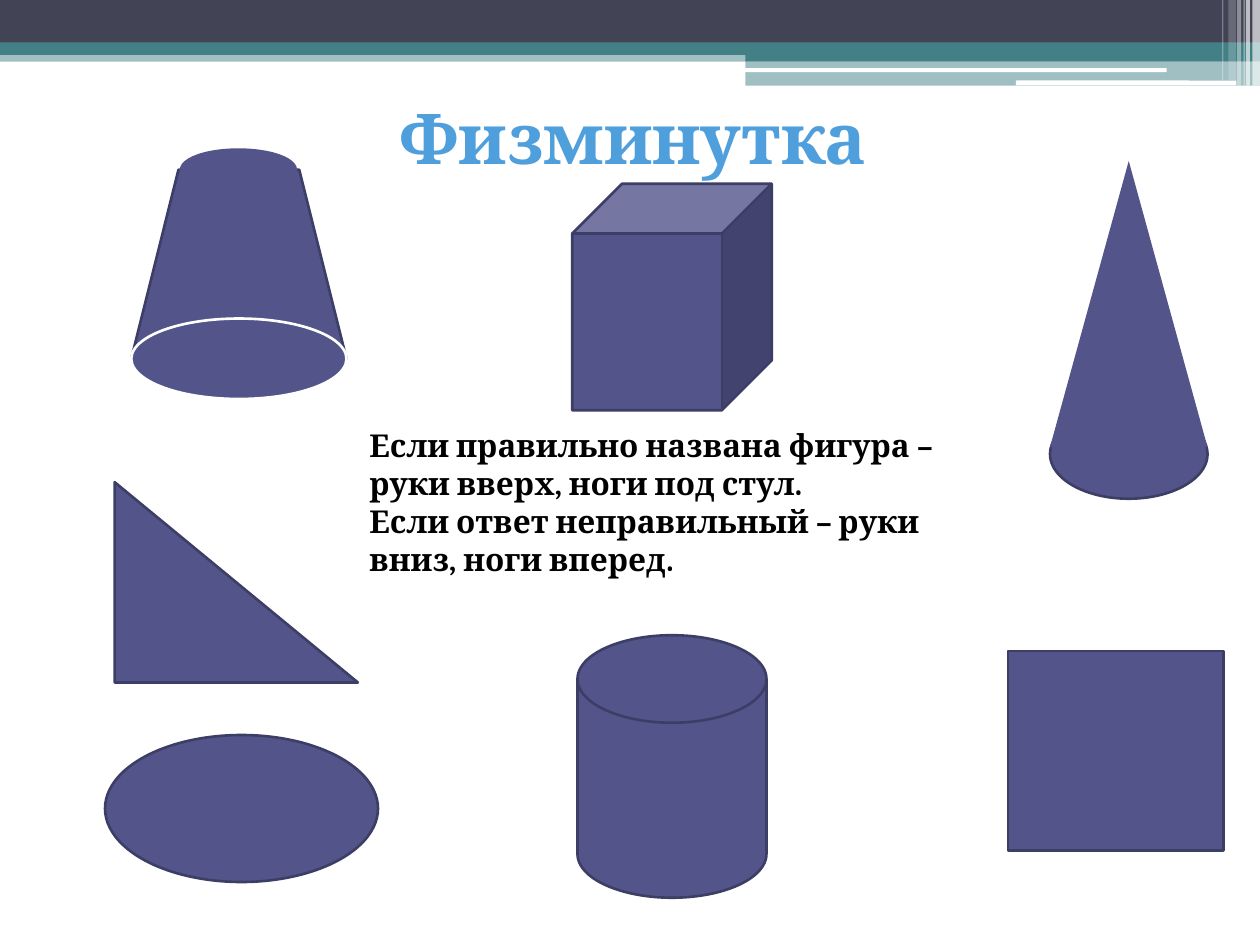
"""Build the "Физминутка" slide: geometric figures around an exercise rule."""
import pptx
import pptx.util
import pptx.dml.color
import pptx.enum.shapes
import pptx.enum.text
import pptx.oxml
import pptx.oxml.ns

Pt = pptx.util.Pt
RGBColor = pptx.dml.color.RGBColor
Shape = pptx.enum.shapes.MSO_SHAPE
Align = pptx.enum.text.PP_ALIGN
Anchor = pptx.enum.text.MSO_ANCHOR

WHITE = RGBColor(0xFF, 0xFF, 0xFF)
BLACK = RGBColor(0, 0, 0)
SLATE = RGBColor(0x42, 0x44, 0x56)
TEAL = RGBColor(0x43, 0x80, 0x86)
INDIGO = RGBColor(0x53, 0x54, 0x8A)
DARK_INDIGO = RGBColor(0x3D, 0x3E, 0x66)
SKY = RGBColor(0x4E, 0x9F, 0xDB)
FONT = "Cambria"

BANNER = [
    (Shape.RECTANGLE, (0, 28.8, 720, 6.5), TEAL, 50),
    (Shape.RECTANGLE, (0, 0, 720, 24.5), SLATE, 100),
    (Shape.RECTANGLE, (0, 24.2, 720, 7.2), TEAL, 100),
    (Shape.RECTANGLE, (426, 28, 294, 7), TEAL, 100),
    (Shape.RECTANGLE, (426, 34.7, 294, 14.2), TEAL, 50),
    (Shape.ROUNDED_RECTANGLE, (425.5, 39, 241.2, 2.2), WHITE, 100),
    (Shape.ROUNDED_RECTANGLE, (580.5, 46, 126, 2.8), WHITE, 100),
]
STRIPES = [
    (715.7, 4.3, 49, 65),
    (712, 2.2, 49, 65),
    (710.6, 0.7, 49, 60),
    (707, 2.2, 49, 40),
    (702, 4.3, 46, 20),
    (698.4, 0.7, 46, 30),
]
FIGURES = [
    (Shape.RECTANGLE, (576, 372, 123, 114), DARK_INDIGO),
    (Shape.OVAL, (60, 420, 156, 84), DARK_INDIGO),
    (Shape.RIGHT_TRIANGLE, (65.5, 275.5, 139, 114.5), DARK_INDIGO),
    (Shape.FLOWCHART_MAGNETIC_DISK, (330, 363, 108, 150), DARK_INDIGO),
    (Shape.CUBE, (327, 105, 114, 129.5), DARK_INDIGO),
    (Shape.OVAL, (600, 234, 90, 51), DARK_INDIGO),
    (Shape.FLOWCHART_EXTRACT, (600, 92, 90, 163.5), None),
    (Shape.TRAPEZOID, (75, 97, 123, 108), DARK_INDIGO),
    (Shape.OVAL, (75, 182, 123, 46), WHITE),
    (Shape.OVAL, (103.5, 85.5, 65.5, 23), INDIGO),
]
TITLE = ["Физминутка "]
RULES = [
    "Если правильно названа фигура – руки вверх, ноги под стул.",
    "Если ответ неправильный – руки вниз, ноги вперед.",
]


def add_figure(slide, kind, box, fill, outline=None, opacity=100):
    figure = slide.shapes.add_shape(kind, *map(Pt, box))
    figure.shadow.inherit = False
    figure.fill.solid()
    figure.fill.fore_color.rgb = fill
    if outline is None:
        figure.line.fill.background()
    else:
        figure.line.color.rgb = outline
        figure.line.width = Pt(1.5)
    if opacity < 100:
        color = figure.fill._xPr.find(".//" + pptx.oxml.ns.qn("a:srgbClr"))
        alpha = pptx.oxml.parse_xml(
            f'<a:alpha {pptx.oxml.ns.nsdecls("a")} val="{opacity * 1000}"/>'
        )
        color.append(alpha)


def add_text(slide, box, lines, size, color, align, anchor):
    frame = slide.shapes.add_textbox(*map(Pt, box)).text_frame
    frame.word_wrap = True
    frame.vertical_anchor = anchor
    for index, line in enumerate(lines):
        paragraph = frame.add_paragraph() if index else frame.paragraphs[0]
        paragraph.alignment = align
        run = paragraph.add_run()
        run.text = line
        run.font.name = FONT
        run.font.size = Pt(size)
        run.font.bold = True
        run.font.color.rgb = color


def main():
    deck = pptx.Presentation()
    deck.slide_width, deck.slide_height = Pt(720), Pt(540)
    slide = deck.slides.add_slide(deck.slide_layouts[6])

    for kind, box, fill, opacity in BANNER:
        add_figure(slide, kind, box, fill, opacity=opacity)
    for left, width, height, opacity in STRIPES:
        add_figure(slide, Shape.RECTANGLE, (left, 0, width, height), WHITE, opacity=opacity)
    add_text(slide, (42, 36, 648, 84), TITLE, 40, SKY, Align.CENTER, Anchor.MIDDLE)
    for kind, box, outline in FIGURES:
        add_figure(slide, kind, box, INDIGO, outline)
    add_text(slide, (204, 240, 372, 94.5), RULES, 18, BLACK, Align.LEFT, Anchor.TOP)

    deck.save("out.pptx")


if __name__ == "__main__":
    main()
